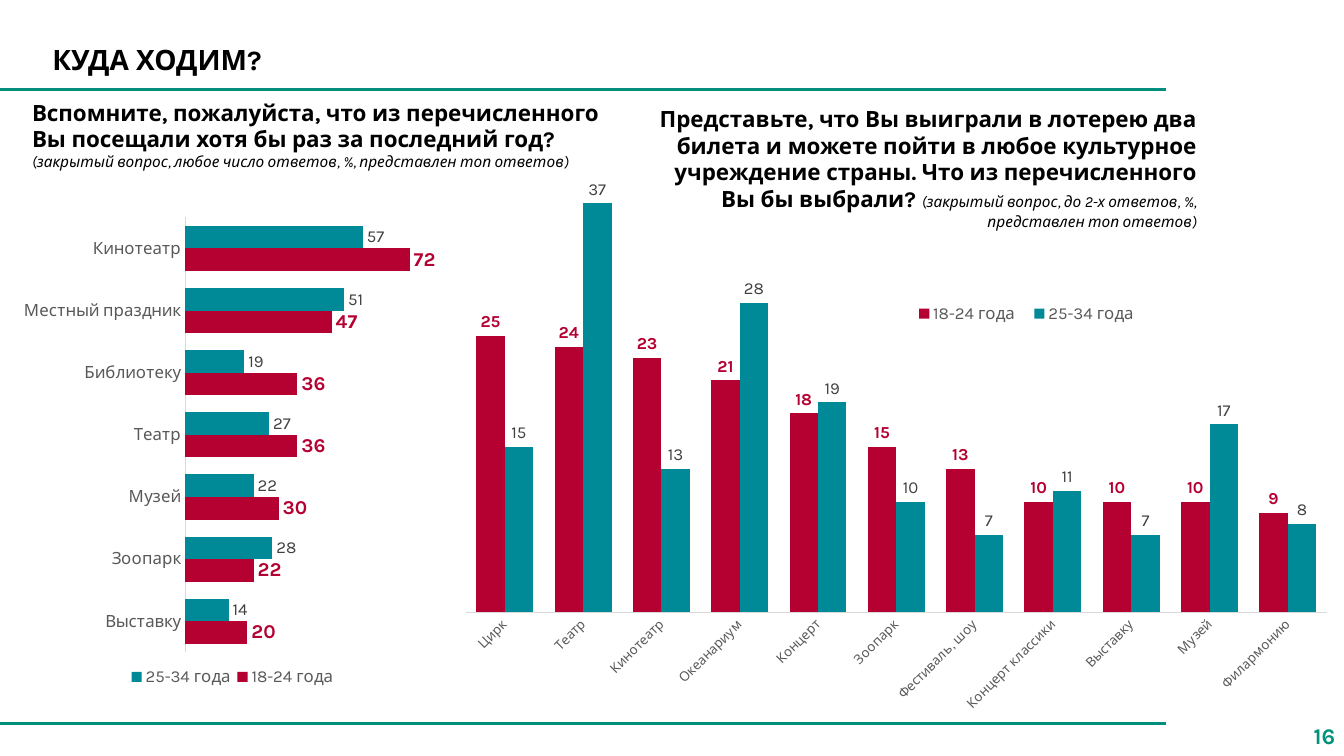
"""Build a survey slide comparing where two age groups go for culture."""
import lxml.etree
import pptx
import pptx.chart.data
import pptx.dml.color
import pptx.enum.chart
import pptx.enum.text
import pptx.oxml
import pptx.oxml.ns
import pptx.util
from pptx.enum.chart import XL_CHART_TYPE, XL_LABEL_POSITION, XL_LEGEND_POSITION, XL_TICK_MARK
from pptx.enum.shapes import MSO_CONNECTOR
from pptx.enum.text import MSO_ANCHOR, PP_ALIGN
from pptx.util import Inches

RGBColor = pptx.dml.color.RGBColor
BLACK = RGBColor(0x00, 0x00, 0x00)
GREEN = RGBColor(0x00, 0x8F, 0x7D)
NUMBER_GREEN = RGBColor(0x00, 0x92, 0x7B)
CRIMSON = RGBColor(0xB5, 0x00, 0x32)
TEAL = RGBColor(0x00, 0x8A, 0x98)
LABEL_GREY = RGBColor(0x40, 0x40, 0x40)
AXIS_GREY = RGBColor(0x59, 0x59, 0x59)
LINE_GREY = RGBColor(0xD9, 0xD9, 0xD9)

VISITED = {
    "Выставку": (20, 14), "Зоопарк": (22, 28), "Музей": (30, 22), "Театр": (36, 27),
    "Библиотеку": (36, 19), "Местный праздник": (47, 51), "Кинотеатр": (72, 57),
}
WISHED = {
    "Цирк": (25, 15), "Театр": (24, 37), "Кинотеатр": (23, 13), "Океанариум": (21, 28),
    "Концерт": (18, 19), "Зоопарк": (15, 10), "Фестиваль, шоу": (13, 7),
    "Концерт классики": (10, 11), "Выставку": (10, 7), "Музей": (10, 17), "Филармонию": (9, 8),
}


class SlideBuilder:
    """Hold the style and the current slide."""

    family = "Karla"

    def __init__(self, page):
        self.page = page

    def style(self, font, size, color, bold=False, italic=False):
        font.name, font.size = self.family, pptx.util.Pt(size)
        font.bold, font.italic = bold, italic
        font.color.rgb = color

    def rule(self, top):
        line = self.page.shapes.add_connector(
            MSO_CONNECTOR.STRAIGHT, 0, Inches(top), Inches(11.56), Inches(top))
        line.line.color.rgb = GREEN
        line.line.width = pptx.util.Pt(2)
        properties = line._element.spPr
        lxml.etree.SubElement(properties, pptx.oxml.ns.qn("a:effectLst"))

    def text(self, place, paragraphs, align=PP_ALIGN.LEFT, anchor=MSO_ANCHOR.TOP):
        box = self.page.shapes.add_textbox(*map(Inches, place))
        frame = box.text_frame
        frame.word_wrap = True
        frame.vertical_anchor = anchor
        for index, spans in enumerate(paragraphs):
            para = frame.paragraphs[0] if index == 0 else frame.add_paragraph()
            para.alignment = align
            for words, *look in spans:
                span = para.add_run()
                span.text = words
                if len(spans) > 1:
                    self.style(span.font, *look)
            if len(spans) == 1:
                self.style(para.font, *look)

    def layout(self, parent, place, inner=False):
        target = '<c:layoutTarget val="inner"/>' if inner else ""
        modes = "".join(f'<c:{side}Mode val="edge"/>' for side in "xy")
        sizes = "".join(f'<c:{side} val="{value}"/>' for side, value in zip("xywh", place))
        layout = pptx.oxml.parse_xml(
            f'<c:layout {pptx.oxml.ns.nsdecls("c")}><c:manualLayout>'
            f"{target}{modes}{sizes}</c:manualLayout></c:layout>")
        for old in parent.findall(pptx.oxml.ns.qn("c:layout")):
            parent.remove(old)
        parent.insert(1 if parent.tag.endswith("legend") else 0, layout)

    def chart(self, kind, place, answers, top_value, plot_place, legend_place,
              category_size, bold_size, turn=None):
        data = pptx.chart.data.CategoryChartData(number_format="0")
        data.categories = list(answers)
        for name, values in zip(("18-24 года", "25-34 года"), zip(*answers.values())):
            data.add_series(name, values)
        chart = self.page.shapes.add_chart(kind, *map(Inches, place), data).chart
        self.style(chart.font, 10, BLACK)
        chart.has_title = False
        chart.has_legend = True
        chart.legend.position = XL_LEGEND_POSITION.BOTTOM
        chart.legend.include_in_layout = False
        self.style(chart.legend.font, 12, AXIS_GREY)
        self.layout(chart.legend._element, legend_place)

        axis = chart.category_axis
        axis.major_tick_mark = axis.minor_tick_mark = XL_TICK_MARK.NONE
        axis.format.line.color.rgb = LINE_GREY
        axis.format.line.width = pptx.util.Pt(0.75)
        self.style(axis.tick_labels.font, category_size, AXIS_GREY)
        if turn is not None:
            axis._element.find(".//" + pptx.oxml.ns.qn("a:bodyPr")).set("rot", str(turn * 60000))
        scale = chart.value_axis
        scale.minimum_scale, scale.maximum_scale = 0, top_value
        scale.has_major_gridlines = False
        scale.visible = False

        plot = chart.plots[0]
        plot.gap_width, plot.overlap = 75, 0
        plot.vary_by_categories = False
        self.layout(chart._chartSpace.chart.plotArea, plot_place, inner=True)
        looks = ((CRIMSON, bold_size, CRIMSON, True), (TEAL, 12, LABEL_GREY, False))
        for series, (fill, size, color, bold) in zip(plot.series, looks):
            series.format.fill.solid()
            series.format.fill.fore_color.rgb = fill
            series.invert_if_negative = False
            labels = series.data_labels
            labels.show_value = True
            labels.position = XL_LABEL_POSITION.OUTSIDE_END
            self.style(labels.font, size, color, bold)


def main():
    deck = pptx.Presentation()
    deck.slide_width, deck.slide_height = Inches(13.33), Inches(7.5)
    builder = SlideBuilder(deck.slides.add_slide(deck.slide_layouts[6]))
    question, hint = (16, BLACK, True), (11, BLACK, False, True)

    for top in (0.89, 7.18):
        builder.rule(top)
    builder.text((12.65, 7.1, 0.69, 0.4), [[("16", 16, NUMBER_GREEN, True)]],
                 PP_ALIGN.RIGHT, MSO_ANCHOR.MIDDLE)
    builder.text((0.42, 0.39, 11.35, 0.4), [[("КУДА ХОДИМ?", 20, BLACK, True)]],
                 anchor=MSO_ANCHOR.MIDDLE)
    builder.text((0.22, 0.93, 6.67, 0.84), [
        [("Вспомните, пожалуйста, что из перечисленного", *question)],
        [("Вы посещали хотя бы раз за последний год?", *question)],
        [("(закрытый вопрос, любое число ответов, %, представлен топ ответов)", *hint)],
    ])
    builder.chart(XL_CHART_TYPE.BAR_CLUSTERED, (0.17, 2.06, 4.27, 4.85), VISITED, 80,
                  (0.39, 0.02, 0.58, 0.89), (0.25, 0.93, 0.5, 0.06), 12, 14)
    builder.text((6.39, 0.99, 5.58, 1.11), [[
        ("Представьте, что Вы выиграли в лотерею два билета и можете пойти в любое культурное "
         "учреждение страны. Что из перечисленного Вы бы выбрали? ", *question),
        ("(закрытый вопрос, до 2-х ответов, %, представлен топ ответов)", *hint),
    ]], PP_ALIGN.RIGHT)
    builder.chart(XL_CHART_TYPE.COLUMN_CLUSTERED, (4.44, 1.57, 8.9, 5.93), WISHED, 40,
                  (0.02, 0.02, 0.96, 0.74), (0.51, 0.22, 0.27, 0.08), 9.5, 12, turn=-45)
    deck.save("out.pptx")


if __name__ == "__main__":
    main()
